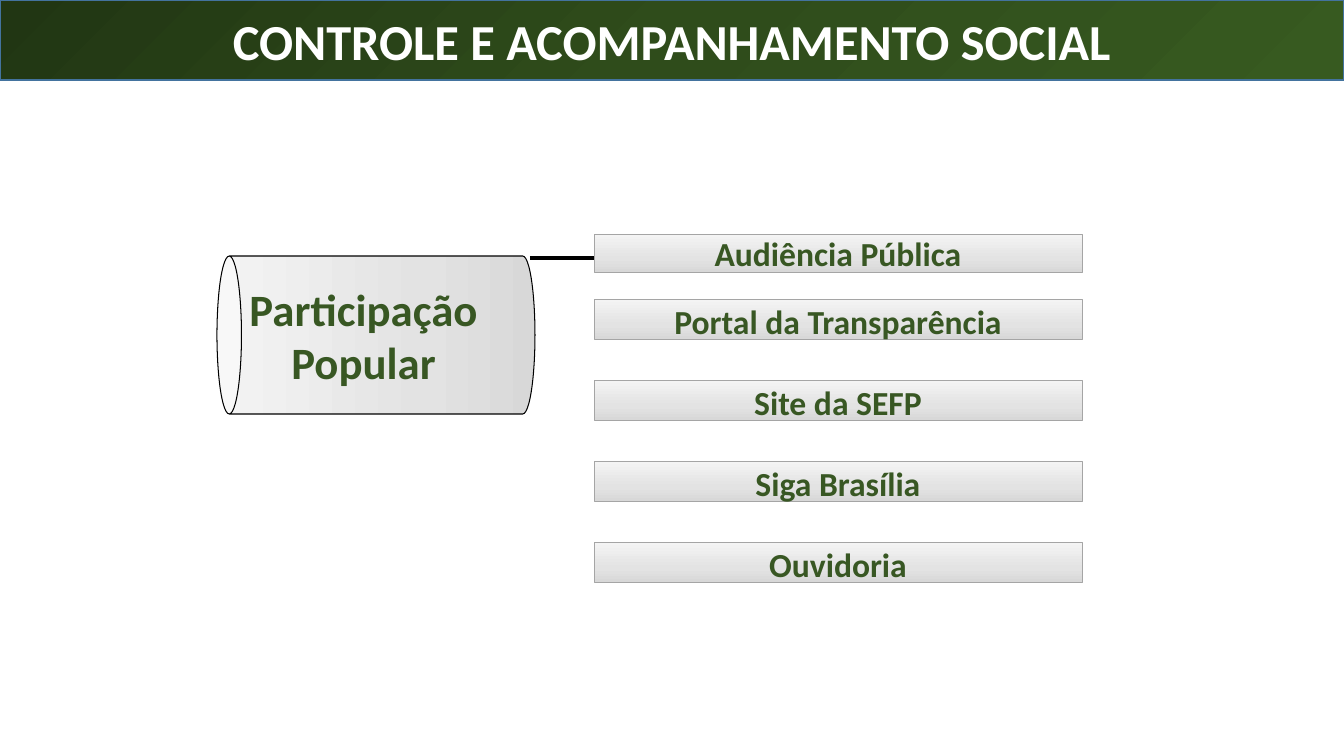
import copy
from dataclasses import dataclass
from typing import Any

import pptx
import pptx.dml.color
import pptx.enum.shapes
import pptx.enum.text
import pptx.oxml.ns
import pptx.oxml.xmlchemy
import pptx.util

RGB = pptx.dml.color.RGBColor
SHAPE = pptx.enum.shapes.MSO_SHAPE

WHITE = RGB(0xFF, 0xFF, 0xFF)
BLACK = RGB(0x00, 0x00, 0x00)
GREEN_TEXT = RGB(0x38, 0x57, 0x23)
BLUE_EDGE = RGB(0x43, 0x73, 0x9E)
GRAY_EDGE = RGB(0xA5, 0xA5, 0xA5)
GREEN_STOPS = (
    (0, RGB(0x21, 0x36, 0x13)),
    (0.5, RGB(0x2F, 0x4C, 0x1B)),
    (1, RGB(0x37, 0x5A, 0x20)),
)
GRAY_STOPS = (
    (0, RGB(0xD8, 0xD8, 0xD8)),
    (0.35, RGB(0xE3, 0xE3, 0xE3)),
    (1, RGB(0xF4, 0xF4, 0xF4)),
)

CHANNEL_LEFT, CHANNEL_WIDTH = 594, 488
FIRST_TOP, FIRST_HEIGHT = 234, 38
NEXT_TOP, NEXT_HEIGHT, NEXT_STEP = 299, 40, 81
NEXT_CHANNELS = ("Portal da Transparência", "Site da SEFP", "Siga Brasília", "Ouvidoria")


@dataclass(frozen=True)
class Style:
    stops: tuple[tuple[float, Any], ...]
    angle: int
    edge: Any
    edge_width: float
    text_color: Any
    text_size: int


@dataclass(frozen=True)
class Panel:
    text: str
    left: int
    top: int
    width: int
    height: int
    style: Style
    margins: tuple[int, int, int, int] = (10, 0, 10, 0)
    kind: Any = SHAPE.RECTANGLE


HEADER = Style(GREEN_STOPS, 315, BLUE_EDGE, 1, WHITE, 36)
CYLINDER = Style(GRAY_STOPS, 90, BLACK, 0.75, GREEN_TEXT, 32)
CHANNEL = Style(GRAY_STOPS, 90, GRAY_EDGE, 0.5, GREEN_TEXT, 24)


def px(length: int) -> pptx.util.Emu:
    return pptx.util.Emu(round(length * 914400 / 100.8))


def apply_format(target: Any, values: dict[str, Any]) -> None:
    for name, value in values.items():
        setattr(target, name, value)


def fill_gradient(box: Any, style: Style) -> None:
    box.fill.gradient()
    stop_list = box.element.spPr.find(".//" + pptx.oxml.ns.qn("a:gsLst"))
    stop_list.append(copy.deepcopy(stop_list[-1]))
    for stop, (position, color) in zip(box.fill.gradient_stops, style.stops):
        stop.position = position
        stop.color.rgb = color
    box.fill.gradient_angle = style.angle


def add_panel(page: Any, panel: Panel) -> Any:
    style = panel.style
    box = page.shapes.add_shape(
        panel.kind, px(panel.left), px(panel.top), px(panel.width), px(panel.height)
    )
    box.shadow.inherit = False
    fill_gradient(box, style)
    box.line.color.rgb = style.edge
    box.line.width = pptx.util.Pt(style.edge_width)
    left, top, right, bottom = (px(margin) for margin in panel.margins)
    apply_format(box.text_frame, {
        "margin_left": left,
        "margin_top": top,
        "margin_right": right,
        "margin_bottom": bottom,
        "word_wrap": True,
        "vertical_anchor": pptx.enum.text.MSO_ANCHOR.MIDDLE,
    })
    para = box.text_frame.paragraphs[0]
    para.alignment = pptx.enum.text.PP_ALIGN.CENTER
    span = para.add_run()
    span.text = panel.text
    apply_format(span.font, {
        "name": "Calibri", "size": pptx.util.Pt(style.text_size), "bold": True,
    })
    span.font.color.rgb = style.text_color
    return box


def add_cylinder(page: Any) -> None:
    cylinder = add_panel(page, Panel(
        "Participação Popular", 297, 176, 158, 318, CYLINDER, (8, 8, 8, 0), SHAPE.CAN
    ))
    cylinder.rotation = 270
    cylinder.adjustments[0] = 0.155
    cylinder.text_frame._txBody.bodyPr.set("vert", "eaVert")


def add_link(page: Any) -> None:
    link = page.shapes.add_connector(
        pptx.enum.shapes.MSO_CONNECTOR.STRAIGHT, px(530), px(258), px(840), px(258)
    )
    link.line.color.rgb = BLACK
    link.line.width = pptx.util.Pt(3)
    link.element.spPr.append(pptx.oxml.xmlchemy.OxmlElement("a:effectLst"))


def main() -> None:
    deck = pptx.Presentation()
    deck.slide_width, deck.slide_height = px(1344), px(756)
    page = deck.slides.add_slide(deck.slide_layouts[6])
    add_panel(page, Panel("CONTROLE E ACOMPANHAMENTO SOCIAL", 0, 0, 1344, 80, HEADER))
    add_cylinder(page)
    add_link(page)
    add_panel(page, Panel(
        "Audiência Pública", CHANNEL_LEFT, FIRST_TOP, CHANNEL_WIDTH, FIRST_HEIGHT, CHANNEL
    ))
    for index, name in enumerate(NEXT_CHANNELS):
        add_panel(page, Panel(
            name, CHANNEL_LEFT, NEXT_TOP + index * NEXT_STEP,
            CHANNEL_WIDTH, NEXT_HEIGHT, CHANNEL, (10, 4, 10, 0),
        ))
    deck.save("out.pptx")


if __name__ == "__main__":
    main()
